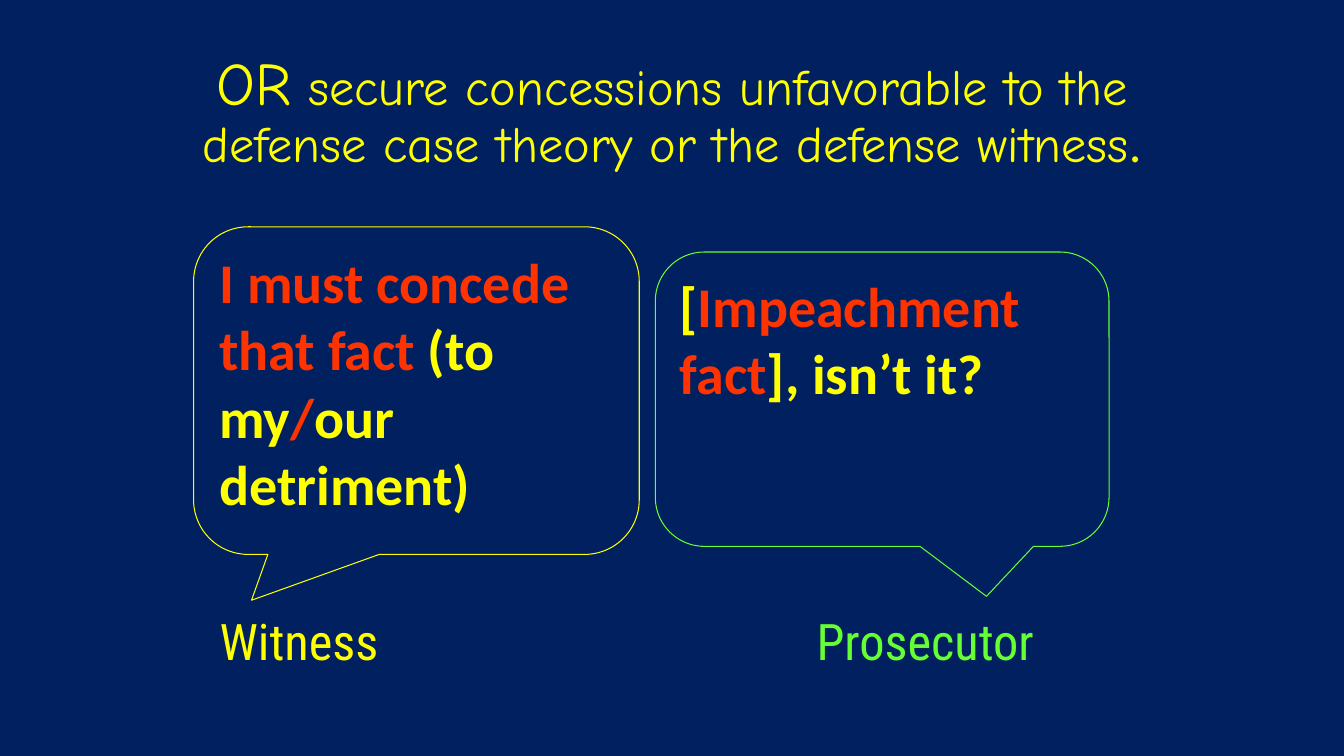
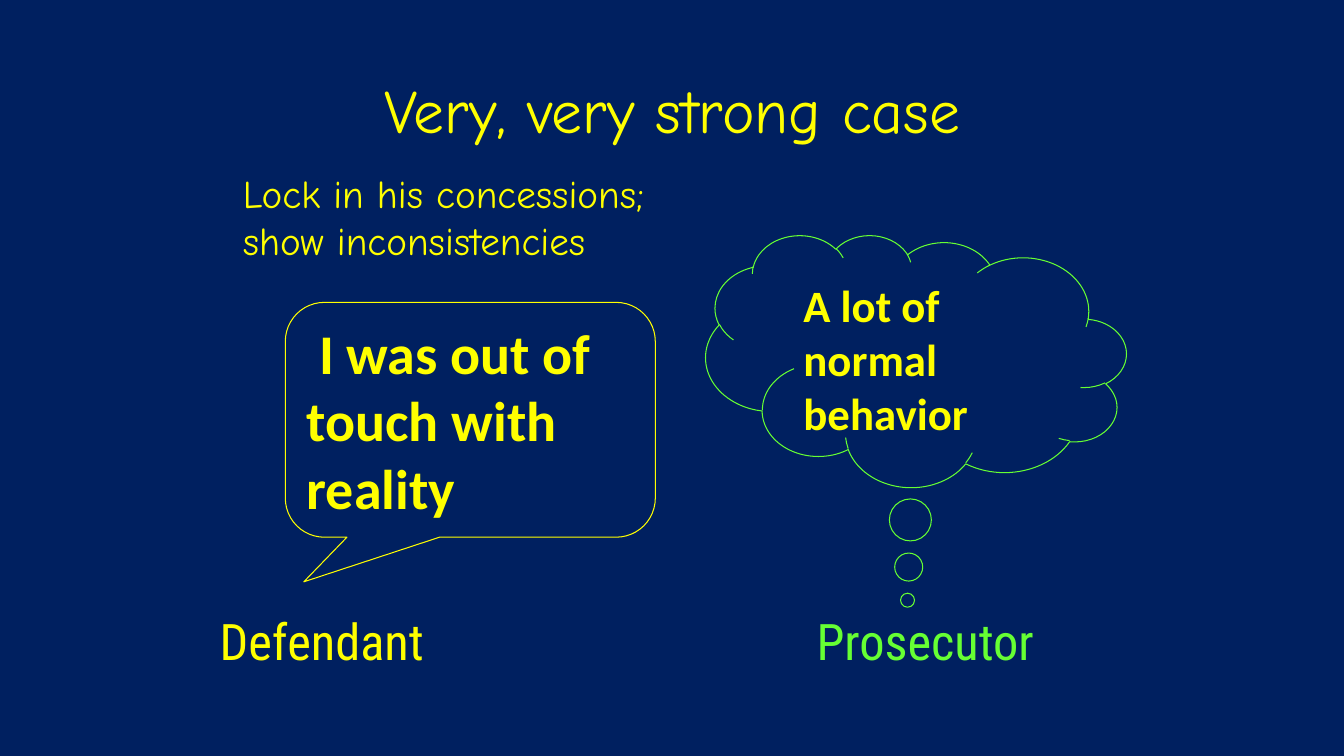
from pptx import Presentation
from pptx.dml.color import RGBColor
from pptx.enum.shapes import MSO_SHAPE
from pptx.enum.text import MSO_ANCHOR, PP_ALIGN
from pptx.oxml.ns import qn
from pptx.util import Inches, Pt

COLORS = {
    "navy": "002060",
    "yellow": "FFFF00",
    "green": "66FF33",
    "red": "FF3300",
}
TITLE_FONT, SPEECH_FONT, ROLE_FONT = "Comic Neue", "Calibri", "Roboto Condensed"


def color(name):
    return RGBColor.from_string(COLORS[name])


def add_run(paragraph, text, *, size, font, hue="yellow", bold=False):
    run = paragraph.add_run()
    run.text = text
    run.font.size = Pt(size)
    run.font.name = font
    run.font.bold = bold
    run.font.color.rgb = color(hue)


def write(frame, paragraphs, *, align=PP_ALIGN.LEFT, anchor=MSO_ANCHOR.TOP,
          line_spacing=None, **style):
    """Fill a frame; each paragraph is a list of (text, style changes) runs."""
    frame.word_wrap = True
    frame.vertical_anchor = anchor
    for index, runs in enumerate(paragraphs):
        paragraph = frame.add_paragraph() if index else frame.paragraphs[0]
        paragraph.alignment = align
        if line_spacing:
            paragraph.line_spacing = line_spacing
        for text, changes in runs:
            add_run(paragraph, text, **{**style, **changes})


class Deck:
    """Holds the shared style and the current slide."""

    def __init__(self):
        self.presentation = Presentation()
        self.presentation.slide_width = Inches(13.33)
        self.presentation.slide_height = Inches(7.5)
        self.slide = None

    def new_slide(self):
        layout = self.presentation.slide_layouts[6]
        self.slide = self.presentation.slides.add_slide(layout)
        background = self.slide.background.fill
        background.solid()
        background.fore_color.rgb = color("navy")

    def text(self, box, paragraphs, **style):
        frame = self.slide.shapes.add_textbox(*map(Inches, box)).text_frame
        write(frame, paragraphs, **style)

    def title(self, box, runs, size):
        self.text(box, [runs], size=size, font=TITLE_FONT, line_spacing=0.9,
                  align=PP_ALIGN.CENTER, anchor=MSO_ANCHOR.MIDDLE)

    def roles(self, left_role, right_role):
        """Name the two speakers below their callouts."""
        for left, role, hue in ((2.08, left_role, "yellow"),
                                (8, right_role, "green")):
            self.text((left, 6, 2.92, 1), [[(role, {})]],
                      size=36, font=ROLE_FONT, hue=hue)

    def callout(self, box, runs, tail, *, outline, size=40,
                preset=MSO_SHAPE.ROUNDED_RECTANGULAR_CALLOUT, flip=False):
        """Draw a callout; tail is its tip from the centre, in shares of the size."""
        callout = self.slide.shapes.add_shape(preset, *map(Inches, box))
        callout.adjustments[0], callout.adjustments[1] = tail
        callout.shadow.inherit = False
        callout.fill.solid()
        callout.fill.fore_color.rgb = color("navy")
        callout.line.color.rgb = color(outline)
        callout.line.width = Pt(0.75)
        if flip:
            callout._element.spPr.find(qn("a:xfrm")).set("flipH", "1")
        write(callout.text_frame, [runs], size=size, font=SPEECH_FONT, bold=True)


def concessions_slide(deck):
    deck.new_slide()
    deck.title((1.26, 0.5, 10.81, 1.25), [
        ("OR", {"size": 43.2}),
        (" secure concessions unfavorable to the defense case theory"
         " or the defense witness", {}),
        (".", {"font": SPEECH_FONT}),
    ], size=36)
    red = {"hue": "red"}
    deck.callout((1.92, 2.25, 4.42, 3.25), [
        ("I must concede that fact", red),
        (" (to my", {}),
        ("/", red),
        ("our detriment)", {}),
    ], tail=(-0.37, 0.64), outline="yellow")
    deck.callout((6.5, 2.5, 4.5, 2.92), [
        ("[", {}),
        ("Impeachment fact", red),
        ("], isn’t it?", {}),
    ], tail=(0.23, 0.67), outline="green")
    deck.roles("Witness", "Prosecutor")


def strong_case_slide(deck):
    deck.new_slide()
    deck.title((0.92, 0.4, 11.5, 1.45), [("Very, very strong case", {})], size=44)
    deck.text((2.31, 1.63, 4.44, 1.03), [
        [("Lock in his concessions;", {})],
        [("show inconsistencies", {})],
    ], size=28, font=TITLE_FONT)
    deck.callout((2.83, 3, 3.67, 2.33),
                 [(" I was out of touch with reality", {})],
                 tail=(-0.45, 0.69), outline="yellow")
    deck.callout((7, 2.33, 4.17, 2.5), [("A lot of normal behavior", {})],
                 tail=(0.02, 0.95), outline="green", size=32,
                 preset=MSO_SHAPE.CLOUD_CALLOUT, flip=True)
    deck.roles("Defendant", "Prosecutor")


def main():
    deck = Deck()
    concessions_slide(deck)
    strong_case_slide(deck)
    deck.presentation.save("out.pptx")


if __name__ == "__main__":
    main()
